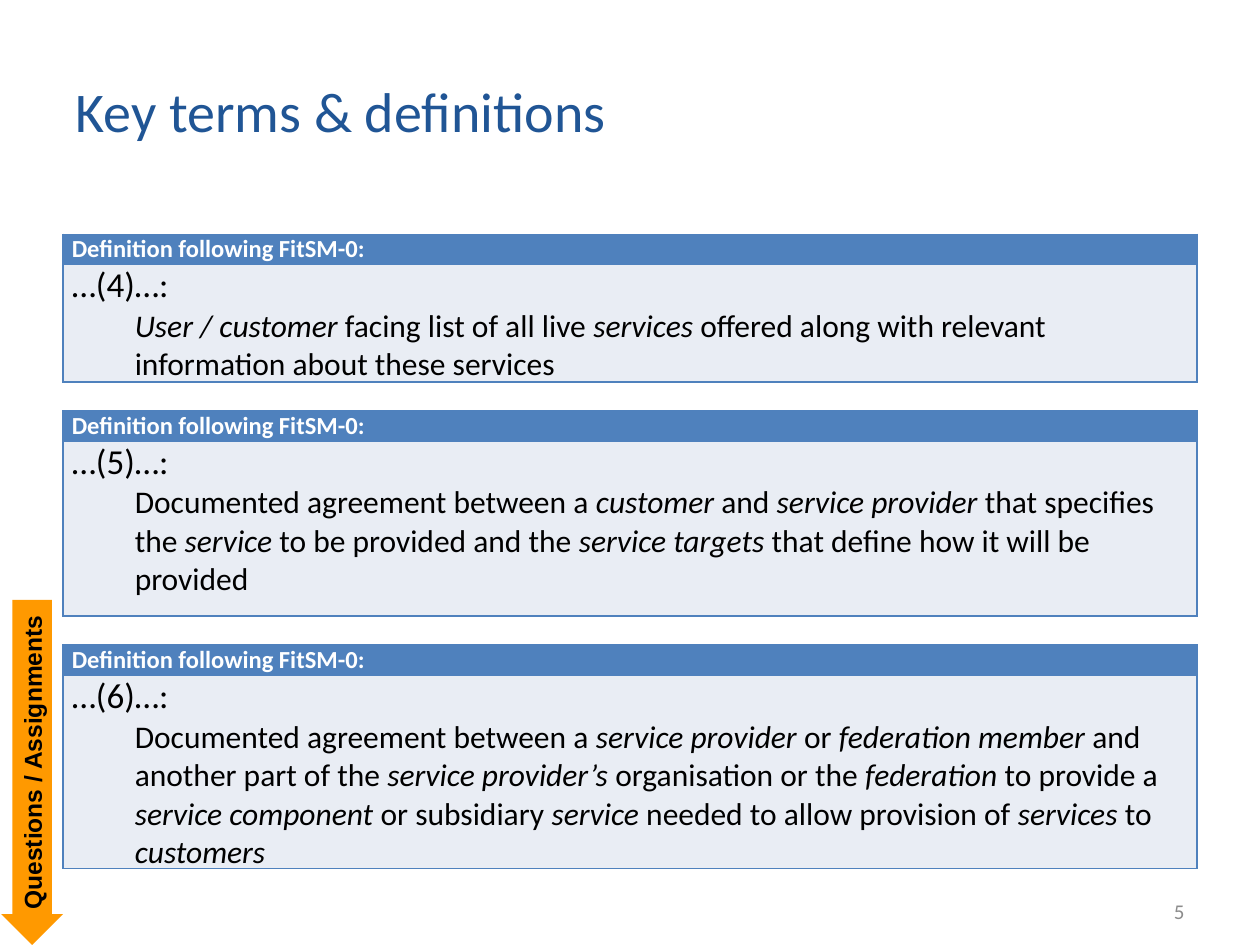
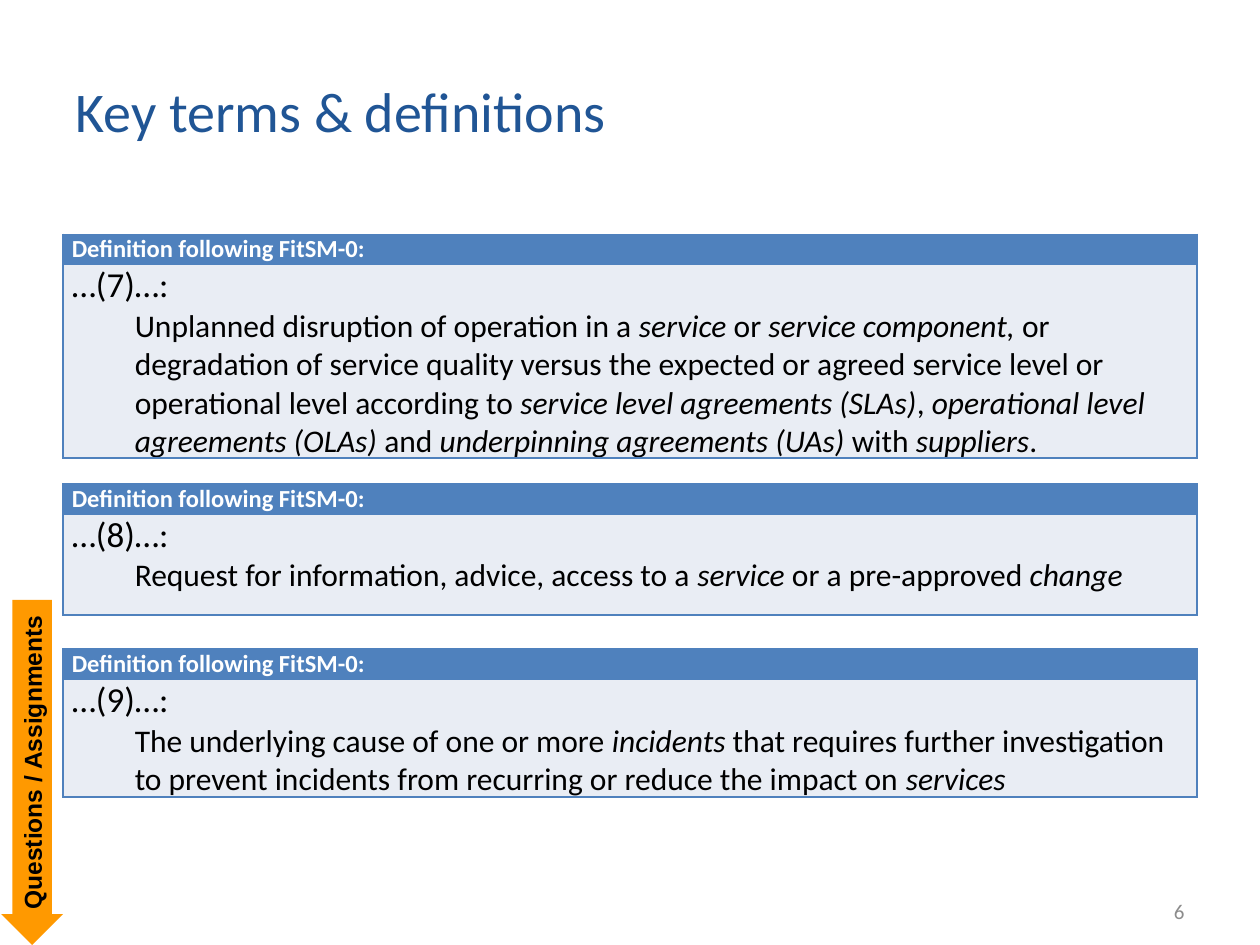
from lxml.etree import SubElement
from pptx import Presentation
from pptx.dml.color import RGBColor
from pptx.enum.shapes import MSO_SHAPE
from pptx.enum.text import MSO_ANCHOR, PP_ALIGN
from pptx.oxml.ns import qn
from pptx.util import Inches, Pt

COLORS = {
    "title": "205595",
    "number": "8C8C8C",
    "header": "4F81BD",
    "body": "E9EDF4",
    "arrow": "FF9900",
    "white": "FFFFFF",
    "black": "000000",
}
COLS, ROWS = 20, 25
WIDTH, HEIGHT = Inches(10), Inches(7.5)
HEADER_ROWS = 0.8

TITLE = "Key terms & definitions"
HEADER = "Definition following FitSM-0:"
TITLE_BOX = (1, 1, 15.44, 3.83)
NUMBER_BOX = (14.34, 23.43, 4.66, 1.33)
ARROW_BOX = (0.02, 15.87, 0.98, 9.13)

SLIDES = [
    (5, [
        (4, 6.2, 3.9,
         "*User / customer* facing list of all live *services* offered along "
         "with relevant information about these services"),
        (5, 10.87, 5.43,
         "Documented agreement between a *customer* and *service provider* that "
         "specifies the *service* to be provided and the *service targets *that "
         "define how it will be provided"),
        (6, 17.07, 5.9,
         "Documented agreement between a *service provider* or *federation "
         "member* and another part of the *service provider’s* organisation or "
         "the *federation* to provide a *service component* or subsidiary "
         "*service* needed to allow provision of *services* to *customers*"),
    ]),
    (6, [
        (7, 6.2, 5.9,
         "Unplanned disruption of operation in a *service* or *service "
         "component, *or degradation of service quality versus the expected or "
         "agreed service level or operational level according to *service level "
         "agreements (SLAs)*, *operational level agreements (OLAs)* and "
         "*underpinning agreements (UAs)* with *suppliers*."),
        (8, 12.8, 3.47,
         "Request for information, advice, access to a *service* or a "
         "pre-approved *change*"),
        (9, 17.17, 3.9,
         "The underlying cause of one or more *incidents* that requires further "
         "investigation to prevent incidents from recurring or reduce the "
         "impact on *services*"),
    ]),
]


def rgb(name):
    return RGBColor.from_string(COLORS[name])


def grid(box):
    x, y, w, h = box
    return (round(x * WIDTH / COLS), round(y * HEIGHT / ROWS),
            round(w * WIDTH / COLS), round(h * HEIGHT / ROWS))


def style(r, size, color, font="Calibri", bold=False, italic=False):
    r.font.name = font
    r.font.size = Pt(size)
    r.font.bold = bold
    r.font.italic = italic
    r.font.color.rgb = rgb(color)


def write(p, text, size, color, **look):
    p.text = text
    style(p.runs[0], size, color, **look)


def add_marked_text(p, text, size, color):
    for i, part in enumerate(text.split("*")):
        if part:
            r = p.add_run()
            r.text = part
            style(r, size, color, italic=i % 2 == 1)


def format_cell(cell, fill):
    cell.margin_left = cell.margin_right = Inches(0.07)
    cell.margin_top = cell.margin_bottom = 0
    tcPr = cell._tc.get_or_add_tcPr()
    for side in ("a:lnL", "a:lnR", "a:lnT", "a:lnB"):
        ln = SubElement(tcPr, qn(side), w=str(Pt(1)))
        solid = SubElement(ln, qn("a:solidFill"))
        SubElement(solid, qn("a:srgbClr"), val=COLORS["header"])
    cell.fill.solid()
    cell.fill.fore_color.rgb = rgb(fill)


def add_title(s, box):
    sp = s.shapes.title
    sp.left, sp.top, sp.width, sp.height = grid(box)
    tf = sp.text_frame
    tf.vertical_anchor = MSO_ANCHOR.MIDDLE
    p = tf.paragraphs[0]
    write(p, TITLE, 32, "title")
    p.alignment = PP_ALIGN.LEFT


def add_number(s, box, number):
    tf = s.shapes.add_textbox(*grid(box)).text_frame
    tf.word_wrap = True
    tf.vertical_anchor = MSO_ANCHOR.MIDDLE
    p = tf.paragraphs[0]
    write(p, str(number), 12, "number")
    p.alignment = PP_ALIGN.RIGHT


def add_definition(s, box, number, text):
    x, y, w, h = grid(box)
    table = s.shapes.add_table(2, 1, x, y, w, h).table
    header_height = round(HEADER_ROWS * HEIGHT / ROWS)
    table.rows[0].height = header_height
    table.rows[1].height = h - header_height
    header, body = table.cell(0, 0), table.cell(1, 0)
    format_cell(header, "header")
    format_cell(body, "body")
    write(header.text_frame.paragraphs[0], HEADER, 14, "white", bold=True)
    tf = body.text_frame
    write(tf.paragraphs[0], f"…({number})…:", 20, "black")
    p = tf.add_paragraph()
    p.level = 1
    pPr = p._p.get_or_add_pPr()
    pPr.set("marL", str(Inches(0.5)))
    pPr.set("indent", "0")
    add_marked_text(p, text, 18, "black")


def add_arrow(s, box):
    sp = s.shapes.add_shape(MSO_SHAPE.DOWN_ARROW, *grid(box))
    sp.adjustments[0], sp.adjustments[1] = 0.64, 0.5
    sp.shadow.inherit = False
    sp.fill.solid()
    sp.fill.fore_color.rgb = rgb("arrow")
    sp.line.fill.background()
    tf = sp.text_frame
    tf.word_wrap = True
    tf.vertical_anchor = MSO_ANCHOR.MIDDLE
    tf.margin_left = tf.margin_right = Inches(0.04)
    tf.margin_top = tf.margin_bottom = Inches(0.05)
    tf._txBody.bodyPr.set("vert", "vert270")
    p = tf.paragraphs[0]
    write(p, "Questions / Assignments", 14, "black", font="Arial", bold=True)
    p.alignment = PP_ALIGN.CENTER


def add_definitions_slide(prs, number, definitions):
    s = prs.slides.add_slide(prs.slide_layouts[5])
    add_title(s, TITLE_BOX)
    add_number(s, NUMBER_BOX, number)
    for term, row, rows, text in definitions:
        add_definition(s, (1, row, COLS - 2, rows), term, text)
    add_arrow(s, ARROW_BOX)


def main():
    prs = Presentation()
    prs.slide_width, prs.slide_height = WIDTH, HEIGHT
    for number, definitions in SLIDES:
        add_definitions_slide(prs, number, definitions)
    prs.save("out.pptx")


if __name__ == "__main__":
    main()
